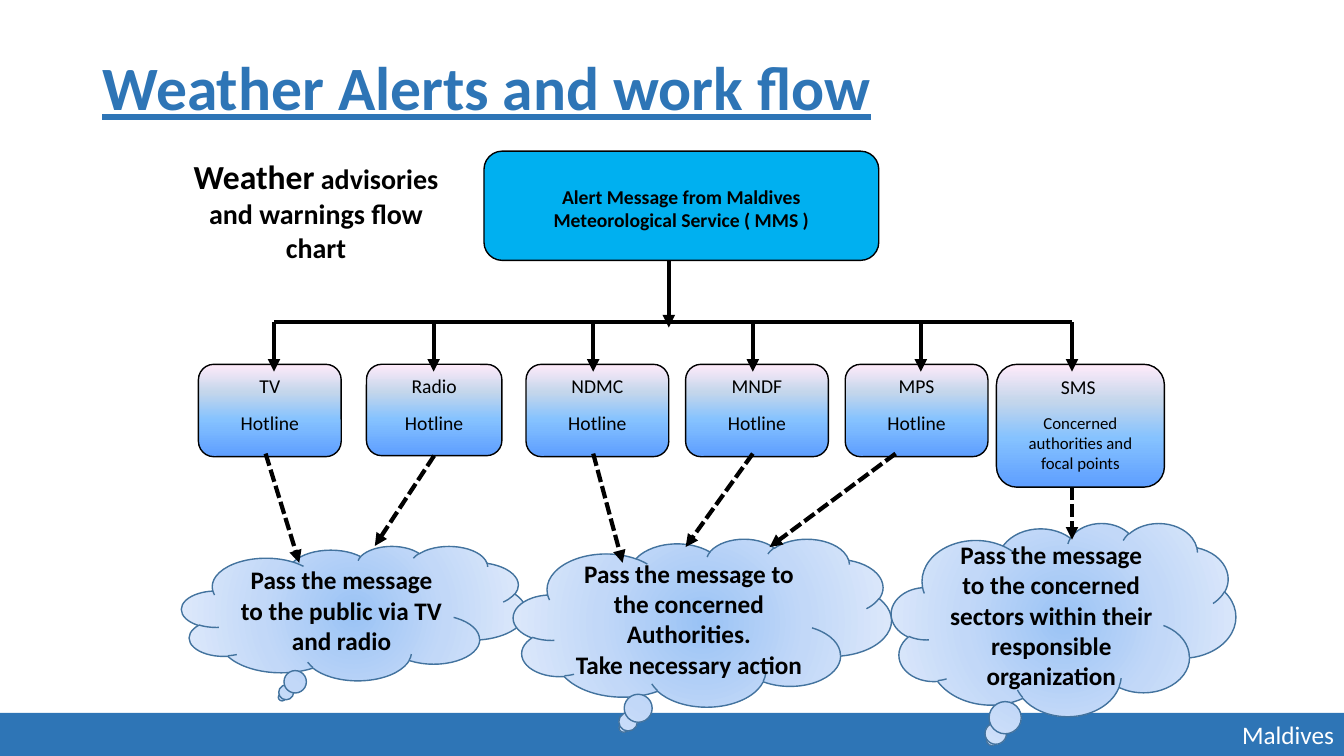
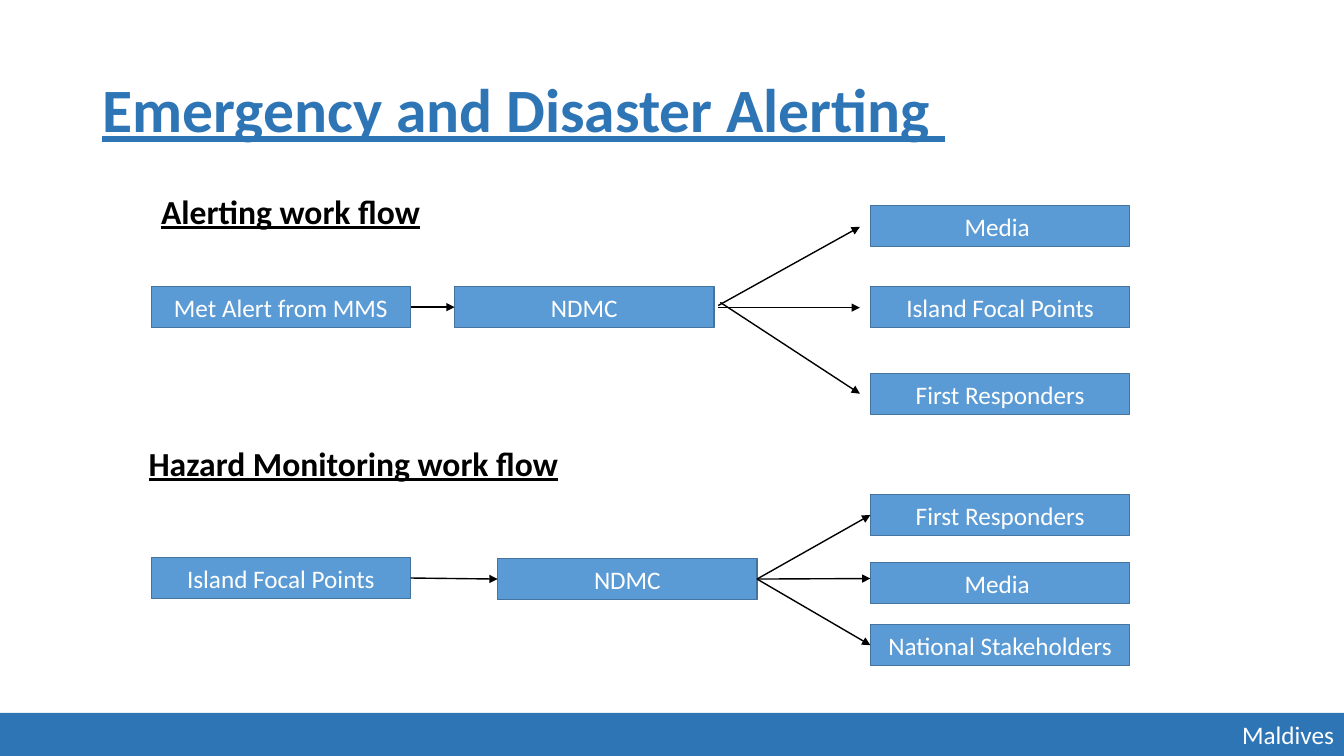
from pptx import Presentation
from pptx.dml.color import RGBColor
from pptx.enum.dml import MSO_LINE
from pptx.enum.shapes import MSO_CONNECTOR, MSO_SHAPE
from pptx.enum.text import MSO_ANCHOR, PP_ALIGN
from pptx.oxml import parse_xml
from pptx.oxml.ns import nsdecls, qn
from pptx.oxml.xmlchemy import OxmlElement
from pptx.util import Pt

SCALE = 9525
SLIDE_WIDTH, SLIDE_HEIGHT = 1280, 720
FONT = "Calibri"
BLACK, WHITE = "000000", "FFFFFF"
BAND_BLUE, BOX_BLUE, OUTLINE_BLUE, ALERT_BLUE = "2E75B6", "5B9BD5", "43739E", "00B0F0"
HOTLINE_STOPS = [(0, "5E9EFF"), (40, "85C2FF"), (70, "C4D6EB"), (100, "FFEBFA")]
HOTLINE_DIRECTION = '<a:lin ang="16200000" scaled="0"/>'
CLOUD_STOPS = [(0, "9AC3F5"), (50, "C2D8F8"), (100, "E1EBFB")]
CLOUD_DIRECTION = (
    '<a:path path="circle"><a:fillToRect l="50000" t="50000" r="50000" b="50000"/></a:path>'
)
TOP, LEFT, BOTTOM, RIGHT = range(4)


def px(*lengths):
    return [length * SCALE for length in lengths]


def color(hex_string):
    return RGBColor.from_string(hex_string)


def write(shape, *lines, size=18, ink=WHITE, bold=False, underline=False,
          align=PP_ALIGN.CENTER, anchor=MSO_ANCHOR.MIDDLE, after=0, spacing=None, wrap=True):
    frame = shape.text_frame
    frame.word_wrap = wrap
    frame.vertical_anchor = anchor
    for number, line in enumerate(lines):
        paragraph = frame.add_paragraph() if number else frame.paragraphs[0]
        paragraph.alignment = align
        paragraph.space_after = Pt(after)
        if spacing:
            paragraph.line_spacing = spacing
        for words, points in [(line, size)] if isinstance(line, str) else line:
            run = paragraph.add_run()
            run.text = words
            run.font.name = FONT
            run.font.size = Pt(points)
            run.font.bold = bold
            run.font.underline = underline
            run.font.color.rgb = color(ink)


def add_block(slide, kind, bounds, fill=None, outline=None):
    block = slide.shapes.add_shape(kind, *px(*bounds))
    block.shadow.inherit = False
    if fill:
        block.fill.solid()
        block.fill.fore_color.rgb = color(fill)
    if outline:
        block.line.color.rgb = color(outline)
        block.line.width = Pt(1)
    else:
        block.line.fill.background()
    return block


def add_gradient(block, stops, direction):
    block.fill.background()
    marks = "".join(
        f'<a:gs pos="{position * 1000}"><a:srgbClr val="{tint}"/></a:gs>' for position, tint in stops
    )
    gradient = parse_xml(
        f'<a:gradFill {nsdecls("a")} rotWithShape="1"><a:gsLst>{marks}</a:gsLst>{direction}</a:gradFill>'
    )
    properties = block.element.spPr
    properties.replace(properties.find(qn("a:noFill")), gradient)


def add_line(slide, start, end, width=1, dashed=False, arrow=True, source=None, target=None):
    line = slide.shapes.add_connector(MSO_CONNECTOR.STRAIGHT, *px(*start, *end))
    if source:
        line.begin_connect(*source)
    if target:
        line.end_connect(*target)
    line.line.color.rgb = color(BLACK)
    line.line.width = Pt(width)
    if dashed:
        line.line.dash_style = MSO_LINE.SQUARE_DOT
    properties = line.element.spPr
    if arrow:
        head = OxmlElement("a:tailEnd")
        head.set("type", "triangle")
        properties.find(qn("a:ln")).append(head)
    properties.append(OxmlElement("a:effectLst"))


def add_label(slide, bounds, *lines, **style):
    label = slide.shapes.add_textbox(*px(*bounds))
    write(label, *lines, ink=BLACK, bold=True, anchor=MSO_ANCHOR.TOP, **style)


def add_station(slide, left, top, name):
    station = add_block(slide, MSO_SHAPE.RECTANGLE, (left, top, 247, 39), BOX_BLUE, OUTLINE_BLUE)
    write(station, name)
    return station


def add_titled_slide(deck, layout, title, top):
    slide = deck.slides.add_slide(layout)
    heading = slide.shapes.title
    heading.left, heading.top, heading.width, heading.height = px(88, top, 1104, 139)
    write(heading, title, size=44, ink=BAND_BLUE, bold=True, underline=True,
          align=PP_ALIGN.LEFT, spacing=0.9)
    return slide


def move_band_to_layout(slide, layout):
    band = add_block(slide, MSO_SHAPE.RECTANGLE, (0, 679, SLIDE_WIDTH, 41), BAND_BLUE)
    write(band, "Maldives", align=PP_ALIGN.RIGHT)
    band.element.nvSpPr.cNvPr.set("id", "20")
    layout.shapes.element.insert(2, band.element)


def draw_weather_flow(slide):
    alert = add_block(slide, MSO_SHAPE.ROUNDED_RECTANGLE, (461, 144, 376, 104), ALERT_BLUE, BLACK)
    alert.text_frame.margin_top = px(27)[0]
    write(alert, "Alert Message from Maldives Meteorological Service ( MMS )",
          size=14, ink=BLACK, bold=True, anchor=MSO_ANCHOR.TOP)

    authorities = [[("Concerned authorities and focal points", 12)]]
    receivers = {}
    for name, left, width, height, detail in (
        ("TV", 189, 136, 88, ["Hotline"]),
        ("Radio", 349, 129, 87, ["Hotline"]),
        ("NDMC", 501, 136, 88, ["Hotline"]),
        ("MNDF", 653, 136, 88, ["Hotline"]),
        ("MPS", 805, 136, 88, ["Hotline"]),
        ("SMS ", 949, 160, 117, authorities),
    ):
        receiver = add_block(slide, MSO_SHAPE.ROUNDED_RECTANGLE, (left, 347, width, height),
                             outline=BLACK)
        add_gradient(receiver, HOTLINE_STOPS, HOTLINE_DIRECTION)
        write(receiver, name, *detail, size=14, ink=BLACK, anchor=MSO_ANCHOR.TOP, after=10)
        receivers[name] = receiver

    for bounds, *duty in (
        ((173, 520, 328, 128), "Pass the message to the public via TV and radio"),
        ((489, 513, 360, 160), "Pass the message to the concerned Authorities.",
         "Take necessary action"),
        ((849, 498, 328, 184),
         "Pass the message to the concerned sectors within their responsible organization"),
    ):
        cloud = add_block(slide, MSO_SHAPE.CLOUD_CALLOUT, bounds, outline=OUTLINE_BLUE)
        add_gradient(cloud, CLOUD_STOPS, CLOUD_DIRECTION)
        write(cloud, *duty, ink=BLACK, bold=True)

    drops = (261, 413, 565, 717, 877, 1021)
    add_line(slide, (drops[0], 307), (drops[-1], 307), width=3, arrow=False)
    add_line(slide, (637, 248), (637, 312), width=3)
    for drop in drops:
        add_line(slide, (drop, 307), (drop, 354), width=3)

    for start, end, source in (
        ((253, 432), (285, 536), None),
        ((414, 434), (357, 520), (receivers["Radio"], BOTTOM)),
        ((565, 432), (593, 536), None),
        ((717, 432), (653, 521), None),
        ((853, 432), (733, 521), None),
        ((1021, 464), (1021, 514), None),
    ):
        add_line(slide, start, end, width=3, dashed=True, source=source)

    add_label(slide, (173, 144, 256, 113),
              [("Weather", 24), (" advisories and warnings flow chart", 20)])


def draw_alerting(slide):
    met_alert = add_station(slide, 144, 273, "Met Alert from MMS")
    center = add_station(slide, 433, 273, "NDMC")
    for top, name in ((196, "Media "), (273, "Island Focal Points"), (356, "First Responders")):
        add_station(slide, 829, top, name)
    add_line(slide, (391, 293), (433, 293), source=(met_alert, RIGHT), target=(center, LEFT))
    for start, end in (((684, 293), (819, 293)), ((684, 291), (819, 216)), ((686, 288), (819, 375))):
        add_line(slide, start, end)
    add_label(slide, (144, 177, 269, 48), "Alerting work flow", size=24, underline=True,
              align=PP_ALIGN.LEFT, wrap=False)


def draw_monitoring(slide):
    island = add_station(slide, 144, 531, "Island Focal Points")
    center = add_station(slide, 474, 532, "NDMC")
    add_line(slide, (391, 551), (474, 551), source=(island, RIGHT), target=(center, LEFT))
    for top, name in ((471, "First Responders"), (595, "National Stakeholders")):
        station = add_station(slide, 829, top, name)
        add_line(slide, (721, 551), (829, top), source=(center, RIGHT), target=(station, LEFT))
    add_station(slide, 829, 536, "Media ")
    add_line(slide, (721, 551), (829, 551), source=(center, RIGHT))
    add_label(slide, (132, 417, 413, 48), "Hazard Monitoring work flow", size=24, underline=True,
              align=PP_ALIGN.LEFT, wrap=False)


def main():
    deck = Presentation()
    deck.slide_width, deck.slide_height = px(SLIDE_WIDTH, SLIDE_HEIGHT)
    layout = deck.slide_layouts[5]

    weather = add_titled_slide(deck, layout, "Weather Alerts and work flow", 17)
    move_band_to_layout(weather, layout)
    draw_weather_flow(weather)

    emergency = add_titled_slide(deck, layout, "Emergency and Disaster Alerting ", 38)
    draw_alerting(emergency)
    draw_monitoring(emergency)

    deck.save("out.pptx")


if __name__ == "__main__":
    main()
